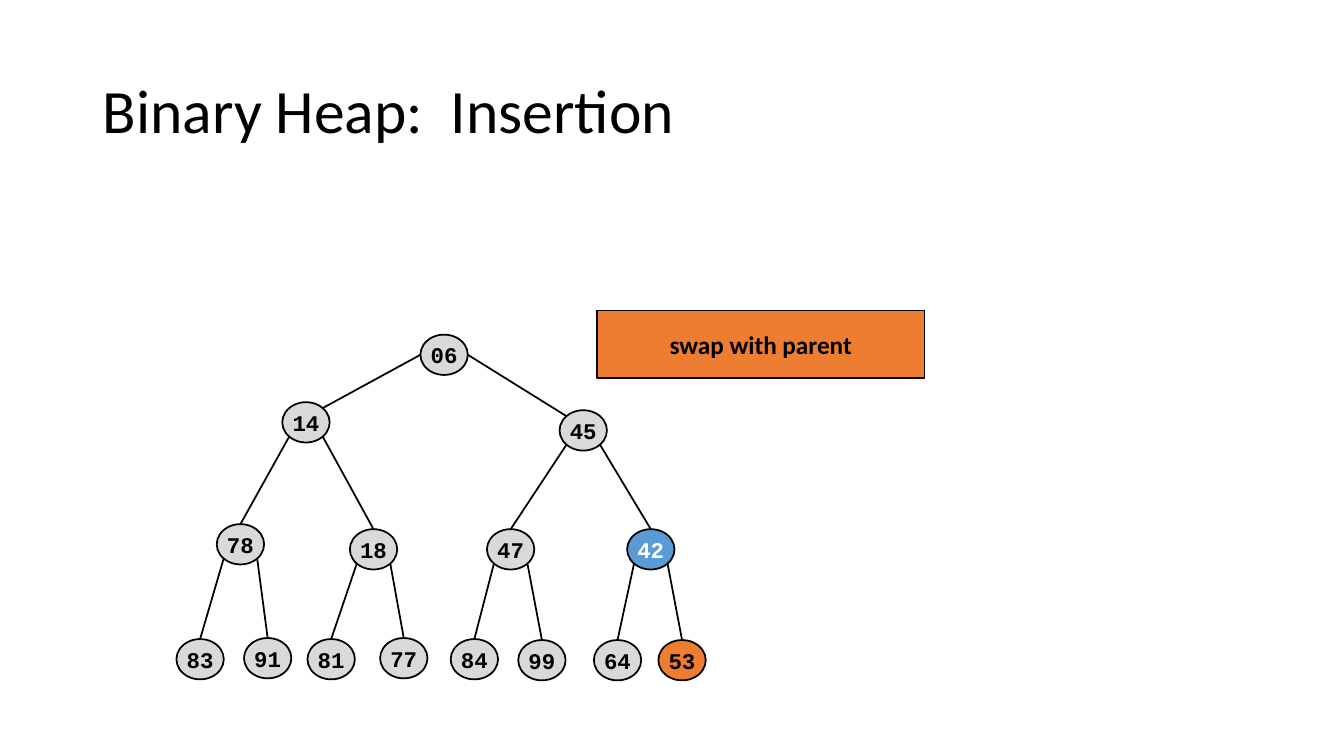
from dataclasses import dataclass
from math import cos, pi, sin

from lxml.etree import SubElement
from pptx import Presentation
from pptx.dml.color import RGBColor
from pptx.enum.shapes import MSO_CONNECTOR as Link, MSO_SHAPE as Form
from pptx.enum.text import MSO_ANCHOR as Anchor, MSO_AUTO_SIZE as Fit, PP_ALIGN as Align
from pptx.oxml.ns import qn
from pptx.util import Inches, Pt

WIDE, HIGH = 0.47, 0.4
BLACK, WHITE = "000000", "FFFFFF"
GRAY, BLUE, ORANGE = "D9D9D9", "5B9BD5", "ED7D31"


@dataclass
class Node:
    key: str
    left: float
    top: float
    fill: str = GRAY
    ink: str = BLACK

    def rim(self, turn: float) -> tuple[float, float]:
        x = self.left + WIDE / 2 * (1 + cos(turn))
        y = self.top + HIGH / 2 * (1 + sin(turn))
        return x, y


HEAP = [
    Node("06", 4.17, 3.32),
    Node("14", 2.8, 3.99),
    Node("45", 5.55, 4.07),
    Node("78", 2.15, 5.2),
    Node("18", 3.47, 5.25),
    Node("47", 4.83, 5.25),
    Node("42", 6.22, 5.25, BLUE, WHITE),
    Node("83", 1.75, 6.34),
    Node("91", 2.42, 6.33),
    Node("81", 3.05, 6.34),
    Node("77", 3.77, 6.33),
    Node("84", 4.47, 6.34),
    Node("99", 5.14, 6.35),
    Node("64", 5.89, 6.35),
    Node("53", 6.53, 6.35, ORANGE),
]


def tint(code: str) -> RGBColor:
    return RGBColor.from_string(code)


def write(shape, text: str, *, size: float, font="Calibri", ink=BLACK,
          bold=False, align=Align.CENTER, wrap=False, space=1.0) -> None:
    frame = shape.text_frame
    frame.auto_size = Fit.NONE
    frame.word_wrap = wrap
    frame.vertical_anchor = Anchor.MIDDLE
    line = frame.paragraphs[0]
    line.alignment = align
    line.line_spacing = space
    run = line.add_run()
    run.text = text
    run.font.name = font
    run.font.size = Pt(size)
    run.font.bold = bold
    run.font.color.rgb = tint(ink)


def outline(shape) -> None:
    shape.line.color.rgb = tint(BLACK)
    shape.line.width = Pt(1.25)


def draw(slide, form: Form, box: tuple[float, ...], fill: str):
    shape = slide.shapes.add_shape(form, *map(Inches, box))
    shape.shadow.inherit = False
    shape.fill.solid()
    shape.fill.fore_color.rgb = tint(fill)
    outline(shape)
    return shape


def join(slide, start: tuple[float, float], end: tuple[float, float]) -> None:
    edge = slide.shapes.add_connector(Link.STRAIGHT, *map(Inches, start + end))
    outline(edge)
    SubElement(edge._element.spPr, qn("a:effectLst"))


def link(slide, spot: int) -> None:
    above = (spot - 1) // 2
    is_left = spot % 2 == 1
    if above == 0:
        start, end = (pi, -pi / 4) if is_left else (0, -3 * pi / 4)
    else:
        start, end = (3 * pi / 4 if is_left else pi / 4), -pi / 2
    join(slide, HEAP[above].rim(start), HEAP[spot].rim(end))


def main() -> None:
    deck = Presentation()
    deck.slide_width, deck.slide_height = Inches(13.33), Inches(7.5)
    slide = deck.slides.add_slide(deck.slide_layouts[5])

    title = slide.shapes.title
    title.left, title.top = Inches(0.92), Inches(0.4)
    title.width, title.height = Inches(11.5), Inches(1.45)
    write(title, "Binary Heap:  Insertion", size=44, align=Align.LEFT,
          wrap=True, space=0.9)

    for spot in range(1, len(HEAP)):
        link(slide, spot)
    for node in HEAP:
        oval = draw(slide, Form.OVAL, (node.left, node.top, WIDE, HIGH), node.fill)
        write(oval, node.key, size=16, font="Courier New", ink=node.ink, bold=True)

    note = draw(slide, Form.RECTANGLE, (5.92, 3.08, 3.25, 0.67), ORANGE)
    write(note, "swap with parent", size=18, bold=True)
    deck.save("out.pptx")


if __name__ == "__main__":
    main()
